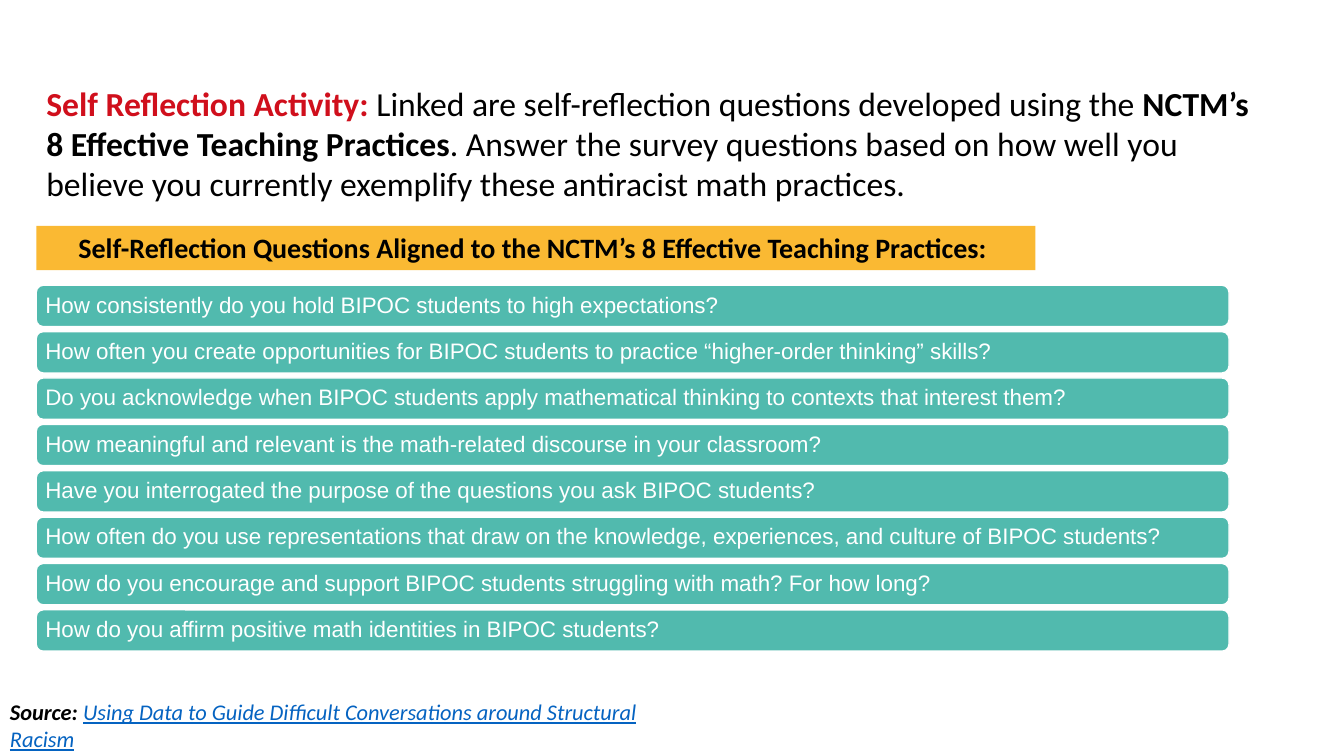
from dataclasses import dataclass

from pptx import Presentation
from pptx.dml.color import RGBColor
from pptx.enum.shapes import MSO_SHAPE
from pptx.enum.text import MSO_ANCHOR, PP_ALIGN
from pptx.util import Inches, Pt

RECT = MSO_SHAPE.RECTANGLE
ROUNDED = MSO_SHAPE.ROUNDED_RECTANGLE
LEFT, CENTER = PP_ALIGN.LEFT, PP_ALIGN.CENTER
TOP, MIDDLE = MSO_ANCHOR.TOP, MSO_ANCHOR.MIDDLE
TITLE_ONLY = 5


@dataclass(frozen=True)
class Theme:
    black: str = "000000"
    white: str = "FFFFFF"
    red: str = "D00F1C"
    gold: str = "FAB933"
    teal: str = "51BAAE"
    link: str = "0563C1"
    heading_font: str = "Calibri"
    question_font: str = "Arial"
    intro_size: int = 24
    banner_size: int = 20
    small_size: int = 16


THEME = Theme()

QUESTIONS = [
    "How consistently do you hold BIPOC students to high expectations?",
    "How often you create opportunities for BIPOC students to practice “higher-order thinking” skills?",
    "Do you acknowledge when BIPOC students apply mathematical thinking to contexts that interest them?",
    "How meaningful and relevant is the math-related discourse in your classroom?",
    "Have you interrogated the purpose of the questions you ask BIPOC students?",
    "How often do you use representations that draw on the knowledge, experiences, and culture of BIPOC students?",
    "How do you encourage and support BIPOC students struggling with math? For how long?",
    "How do you affirm positive math identities in BIPOC students?",
]
MARGIN = 0.36
QUESTION_TOP, QUESTION_PITCH = 2.83, 0.46
QUESTION_WIDTH, QUESTION_HEIGHT = 11.83, 0.41


def add_run(p, text, size, color=THEME.black, font=THEME.heading_font,
            bold=False, italic=False, underline=False):
    r = p.add_run()
    r.text = text
    r.font.name = font
    r.font.size = Pt(size)
    r.font.color.rgb = RGBColor.from_string(color)
    r.font.bold = bold
    r.font.italic = italic
    r.font.underline = underline


def format_frame(tf, align=LEFT, anchor=TOP, inset_x=0.1, inset_y=0.05):
    """Set wrapping, alignment and insets, and return the first paragraph."""
    tf.word_wrap = True
    tf.vertical_anchor = anchor
    tf.margin_left = tf.margin_right = Inches(inset_x)
    tf.margin_top = tf.margin_bottom = Inches(inset_y)
    p = tf.paragraphs[0]
    p.alignment = align
    return p


def add_panel(s, kind, top, width, height, fill, line=None):
    sp = s.shapes.add_shape(kind, Inches(MARGIN), Inches(top), Inches(width), Inches(height))
    sp.shadow.inherit = False
    sp.fill.solid()
    sp.fill.fore_color.rgb = RGBColor.from_string(fill)
    if line:
        sp.line.color.rgb = RGBColor.from_string(line)
        sp.line.width = Pt(1)
    else:
        sp.line.fill.background()
    return sp


def add_intro(s):
    title = s.shapes.title
    title.left, title.top = Inches(MARGIN), Inches(0.77)
    title.width, title.height = Inches(12.14), Inches(1.31)
    p = format_frame(title.text_frame)
    size = THEME.intro_size
    add_run(p, "Self Reflection Activity: ", size, THEME.red, bold=True)
    add_run(p, "Linked are self-reflection questions developed using the ", size)
    add_run(p, "NCTM’s 8 Effective Teaching Practices", size, bold=True)
    add_run(p, ". Answer the survey questions based on how well you believe you "
               "currently exemplify these antiracist math practices.", size)


def add_banner(s):
    sp = add_panel(s, RECT, 2.24, 9.91, 0.44, THEME.gold)
    p = format_frame(sp.text_frame, align=CENTER)
    add_run(p, "Self-Reflection Questions Aligned to the NCTM’s 8 Effective Teaching Practices: ",
            THEME.banner_size, bold=True)


def add_question(s, index, question):
    top = QUESTION_TOP + index * QUESTION_PITCH
    sp = add_panel(s, ROUNDED, top, QUESTION_WIDTH, QUESTION_HEIGHT, THEME.teal, THEME.white)
    p = format_frame(sp.text_frame, anchor=MIDDLE, inset_x=0.07, inset_y=0.04)
    p.line_spacing = 0.9
    add_run(p, question, THEME.small_size, THEME.white, THEME.question_font)


def add_source(s):
    box = s.shapes.add_textbox(Inches(0), Inches(6.88), Inches(6.69), Inches(0.64))
    p = format_frame(box.text_frame)
    add_run(p, "Source: ", THEME.small_size, bold=True, italic=True)
    add_run(p, "Using Data to Guide Difficult Conversations around Structural Racism",
            THEME.small_size, THEME.link, italic=True, underline=True)


def main():
    prs = Presentation()
    prs.slide_width, prs.slide_height = Inches(13.33), Inches(7.5)
    s = prs.slides.add_slide(prs.slide_layouts[TITLE_ONLY])
    add_intro(s)
    add_banner(s)
    for index, question in enumerate(QUESTIONS):
        add_question(s, index, question)
    add_source(s)
    prs.save("out.pptx")


if __name__ == "__main__":
    main()
